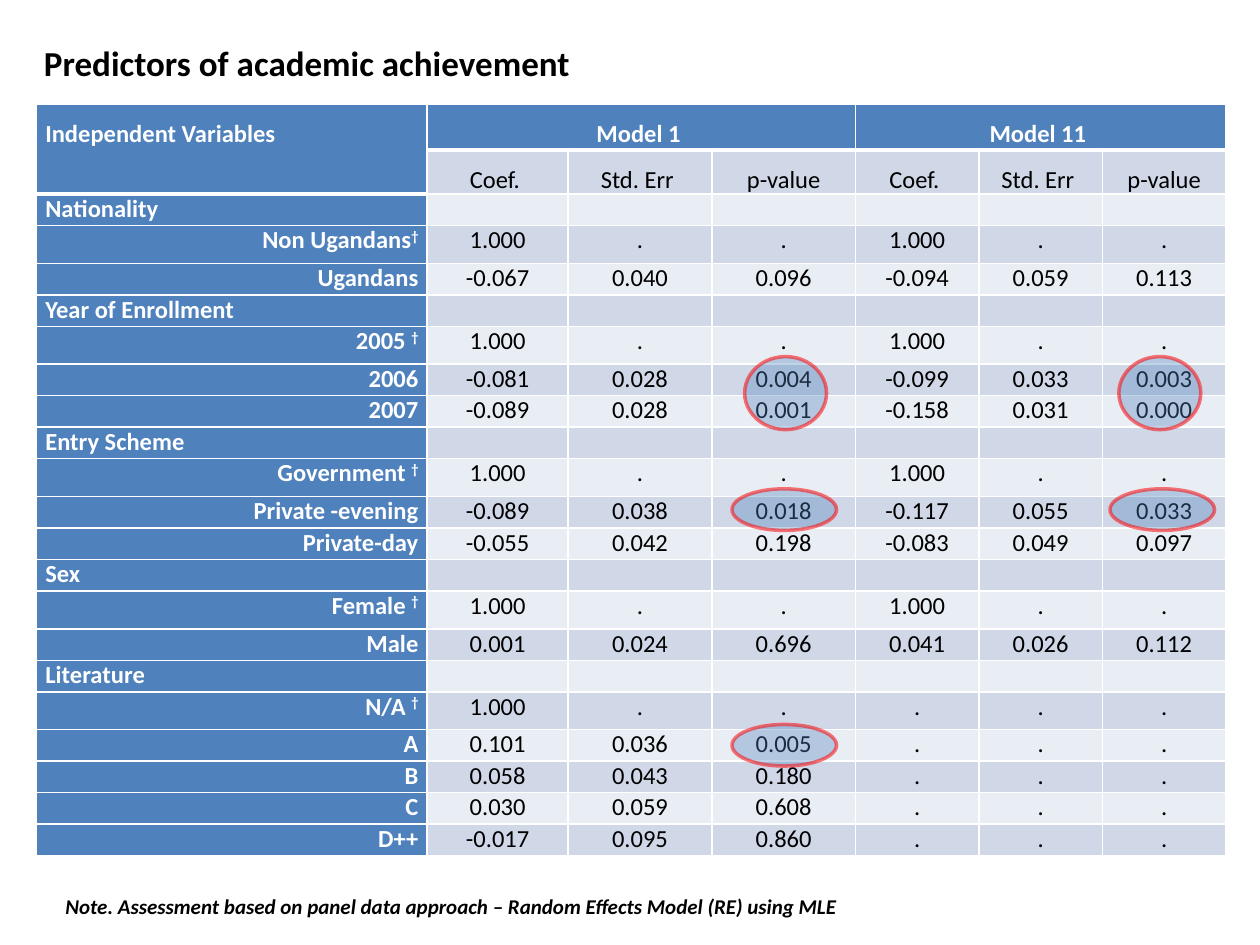
from lxml.etree import SubElement
from pptx import Presentation
from pptx.dml.color import RGBColor
from pptx.enum.shapes import MSO_SHAPE
from pptx.enum.text import PP_ALIGN
from pptx.oxml.ns import qn
from pptx.util import Inches, Pt

FONT = "Calibri"
COLORS = {"blue": "4F81BD", "dark_band": "D0D8E8", "light_band": "E9EDF4",
          "white": "FFFFFF", "black": "000000", "red": "FF0000"}
COLUMN_WIDTHS = [3.1, 1.12, 1.14, 1.14, 0.98, 0.98, 0.98]
HEADER_HEIGHTS = [0.36, 0.34]
ROW_HEIGHT, REFERENCE_HEIGHT = 0.25, 0.3
DAGGER = "†"

MEASURES = ["Coef. ", "Std. Err ", "p-value"]
NONE = [".", ".", "."]
BASE = ["1.000", ".", "."]
# Each group maps its categories to the values of both models.
GROUPS = {
    "Nationality": {
        "Non Ugandans†": BASE + BASE,
        "Ugandans": ["-0.067", "0.040", "0.096", "-0.094", "0.059", "0.113"],
    },
    "Year of Enrollment": {
        "2005 †": BASE + BASE,
        "2006": ["-0.081", "0.028", "0.004", "-0.099", "0.033", "0.003"],
        "2007": ["-0.089", "0.028", "0.001", "-0.158", "0.031", "0.000"],
    },
    "Entry Scheme": {
        "Government †": BASE + BASE,
        "Private -evening": ["-0.089", "0.038", "0.018", "-0.117", "0.055", "0.033"],
        "Private-day": ["-0.055", "0.042", "0.198", "-0.083", "0.049", "0.097"],
    },
    "Sex": {
        "Female †": BASE + BASE,
        "Male": ["0.001", "0.024", "0.696", "0.041", "0.026", "0.112"],
    },
    "Literature": {
        "N/A †": BASE + NONE,
        "A": ["0.101", "0.036", "0.005"] + NONE,
        "B": ["0.058", "0.043", "0.180"] + NONE,
        "C": ["0.030", "0.059", "0.608"] + NONE,
        "D++": ["-0.017", "0.095", "0.860"] + NONE,
    },
}
# Offsets from the table's corner, then width and height.
HIGHLIGHTS = [(5.52, 3.05, 0.83, 0.33), (5.52, 4.92, 0.83, 0.33),
              (8.52, 3.05, 0.83, 0.33), (5.62, 2.0, 0.65, 0.58),
              (8.59, 2.0, 0.65, 0.58)]


def rgb(name):
    return RGBColor.from_string(COLORS[name])


def style_run(run, size, color, bold=False, italic=False):
    run.font.name = FONT
    run.font.size = Pt(size)
    run.font.bold = bold
    run.font.italic = italic
    run.font.color.rgb = rgb(color)


def add_caption(slide, left, top, width, height, text, size, italic=False,
                align=PP_ALIGN.LEFT):
    box = slide.shapes.add_textbox(Inches(left), Inches(top), Inches(width), Inches(height))
    box.text_frame.word_wrap = True
    paragraph = box.text_frame.paragraphs[0]
    paragraph.text = text
    paragraph.alignment = align
    style_run(paragraph.runs[0], size, "black", bold=True, italic=italic)


def set_borders(cell, top, bottom):
    properties = cell._tc.get_or_add_tcPr()
    for side, points in (("L", 1), ("R", 1), ("T", top), ("B", bottom)):
        line = SubElement(properties, qn(f"a:ln{side}"), w=str(Pt(points)))
        fill = SubElement(line, qn("a:solidFill"))
        SubElement(fill, qn("a:srgbClr"), val=COLORS["white"])


def write_cell(cell, text, color, align, spacing=None):
    paragraph = cell.text_frame.paragraphs[0]
    paragraph.alignment = align
    if spacing:
        paragraph.line_spacing = spacing
    if not text:
        SubElement(paragraph._p, qn("a:endParaRPr"), sz="1400")
        return
    label = text.removesuffix(DAGGER)
    for part in [label, DAGGER] if label != text else [label]:
        run = paragraph.add_run()
        run.text = part
        style_run(run, 14, color, bold=color == "white")
        if part == DAGGER:
            run.font._element.set("baseline", "30000")


def table_rows():
    """Return (height, texts, label alignment) for every row."""
    rows = [(HEADER_HEIGHTS[0],
             ["Independent Variables", "Model 1 ", "", "", "Model 11 ", "", ""], PP_ALIGN.LEFT),
            (HEADER_HEIGHTS[1], [""] + MEASURES * 2, PP_ALIGN.LEFT)]
    for group, categories in GROUPS.items():
        rows.append((ROW_HEIGHT, [group] + [""] * 6, PP_ALIGN.LEFT))
        for label, values in categories.items():
            height = REFERENCE_HEIGHT if DAGGER in label else ROW_HEIGHT
            rows.append((height, [label] + values, PP_ALIGN.RIGHT))
    # The first group heading is a little taller than the others.
    rows[3:3] = []
    return rows


def add_model_table(slide, left, top):
    rows = table_rows()
    frame = slide.shapes.add_table(
        len(rows), len(COLUMN_WIDTHS), Inches(left), Inches(top),
        Inches(sum(COLUMN_WIDTHS)), Inches(sum(row[0] for row in rows)))
    table = frame.table
    table.first_row = table.horz_banding = False
    for column, width in zip(table.columns, COLUMN_WIDTHS):
        column.width = Inches(width)

    for r, (height, texts, label_align) in enumerate(rows):
        table.rows[r].height = Inches(height)
        band = "dark_band" if r % 2 else "light_band"
        for c, text in enumerate(texts):
            cell = table.cell(r, c)
            heading = r == 0 or c == 0
            header_end = 1 if c == 0 else 0
            cell.margin_left = cell.margin_right = Inches(0.07)
            cell.margin_top = cell.margin_bottom = 0
            set_borders(cell, top=3 if r == header_end + 1 else 1,
                        bottom=3 if r == header_end else 1)
            cell.fill.solid()
            cell.fill.fore_color.rgb = rgb("blue" if heading else band)
            write_cell(cell, text, "white" if heading else "black",
                       PP_ALIGN.CENTER if c else label_align,
                       spacing=1.5 if r < 2 else None)

    table.cell(0, 0).text_frame.paragraphs[0].space_after = Pt(10)
    table.cell(0, 0).merge(table.cell(1, 0))
    for first in (1, 4):
        table.cell(0, first).merge(table.cell(0, first + 2))


def set_alpha(fill, percent):
    color = fill._xPr.find(qn("a:solidFill")).find(qn("a:srgbClr"))
    SubElement(color, qn("a:alpha"), val=str(percent * 1000))


def add_highlights(slide, left, top):
    """Ring the significant p-values."""
    for dx, dy, width, height in HIGHLIGHTS:
        ring = slide.shapes.add_shape(MSO_SHAPE.OVAL, Inches(left + dx), Inches(top + dy),
                                      Inches(width), Inches(height))
        ring.shadow.inherit = False
        ring.line.width = Pt(2)
        for fill, color, alpha in ((ring.fill, "blue", 35), (ring.line.fill, "red", 52)):
            fill.solid()
            fill.fore_color.rgb = rgb(color)
            set_alpha(fill, alpha)


def main():
    presentation = Presentation()
    presentation.slide_width, presentation.slide_height = Inches(10), Inches(7.5)
    slide = presentation.slides.add_slide(presentation.slide_layouts[6])
    add_caption(slide, 0.25, 0.28, 5.92, 0.44, "Predictors of academic achievement ", 20,
                align=PP_ALIGN.JUSTIFY)
    add_caption(slide, 0.42, 7.04, 9.25, 0.3,
                "Note. Assessment based on panel data approach – "
                "Random Effects Model (RE) using MLE", 12, italic=True)
    add_model_table(slide, 0.29, 0.83)
    add_highlights(slide, 0.29, 0.83)
    presentation.save("out.pptx")


if __name__ == "__main__":
    main()
